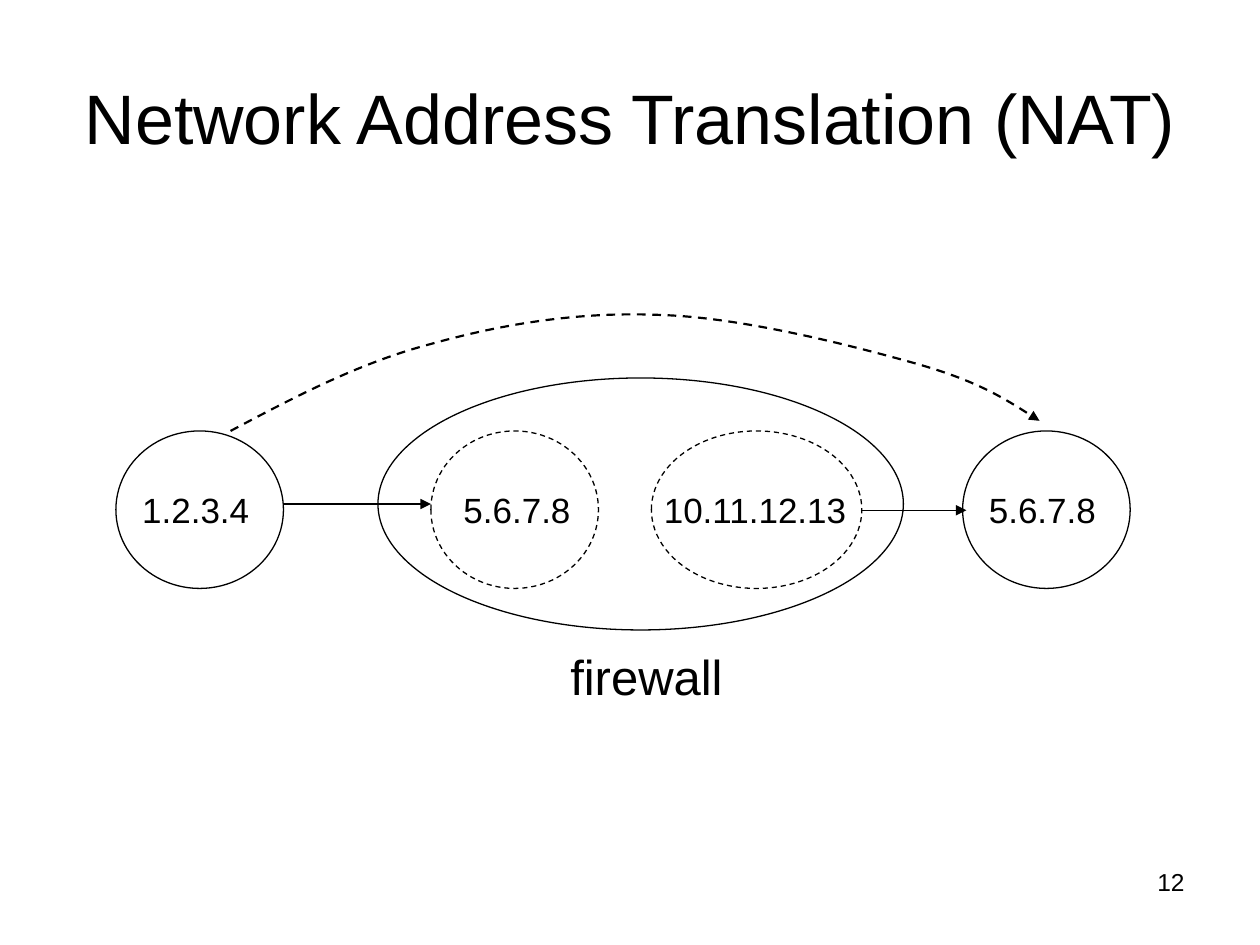
from typing import NamedTuple

from lxml.etree import SubElement
from pptx import Presentation
from pptx.dml.color import RGBColor
from pptx.enum.dml import MSO_LINE
from pptx.enum.shapes import MSO_CONNECTOR, MSO_SHAPE
from pptx.enum.text import MSO_ANCHOR, PP_ALIGN
from pptx.oxml.ns import qn
from pptx.util import Inches, Pt

COLORS = {"ink": "000000", "paper": "FFFFFF"}
FONT = "Arial"


class Oval(NamedTuple):
    left: float
    top: float
    width: float
    height: float
    dashed: bool = False


class Label(NamedTuple):
    text: str
    left: float
    width: float


class Arrow(NamedTuple):
    start: float
    end: float
    y: float


# Nodes share one row; the firewall encloses the two inner ones
ROW, TALL = 3.42, 1.25
OVALS = [
    Oval(3, 3, 4.17, 2),
    Oval(3.42, ROW, 1.33, TALL, True),
    Oval(5.17, ROW, 1.67, TALL, True),
    Oval(0.92, ROW, 1.33, TALL),
    Oval(7.64, ROW, 1.33, TALL),
]
LABELS = [
    Label("1.2.3.4", 1.03, 1.5),
    Label("5.6.7.8", 3.58, 1.5),
    Label("10.11.12.13", 5.17, 1.83),
    Label("5.6.7.8", 7.75, 1.5),
]
ARROWS = [Arrow(2.25, 3.42, 4), Arrow(6.83, 7.67, 4.05)]

# Start point, then two control points and an end point per curve
ROUTE = [
    (1.83, 3.42),
    (2.34, 3.15), (2.85, 2.88), (3.42, 2.73),
    (3.99, 2.57), (4.61, 2.47), (5.25, 2.5),
    (5.89, 2.52), (6.75, 2.74), (7.25, 2.88),
    (7.75, 3.02), (8, 3.18), (8.25, 3.34),
]


def color(name: str) -> RGBColor:
    return RGBColor.from_string(COLORS[name])


def write(frame, text: str, *, size: float, align=PP_ALIGN.LEFT,
          anchor=MSO_ANCHOR.TOP) -> None:
    frame.word_wrap = True
    frame.vertical_anchor = anchor
    para = frame.paragraphs[0]
    para.alignment = align
    run = para.add_run()
    run.text = text
    run.font.size = Pt(size)
    run.font.name = FONT
    run.font.color.rgb = color("ink")


def add_text(slide, text: str, box: tuple, **style) -> None:
    shape = slide.shapes.add_textbox(*map(Inches, box))
    write(shape.text_frame, text, **style)


def ink(line, width: float = 0.75, dashed: bool = False) -> None:
    line.color.rgb = color("ink")
    line.width = Pt(width)
    if dashed:
        line.dash_style = MSO_LINE.DASH


def add_head(shape) -> None:
    line = shape.line._get_or_add_ln()
    SubElement(line, qn("a:tailEnd"), type="triangle")


def draw_oval(slide, oval: Oval) -> None:
    shape = slide.shapes.add_shape(MSO_SHAPE.OVAL, *map(Inches, oval[:4]))
    shape.shadow.inherit = False
    shape.fill.background()
    ink(shape.line, dashed=oval.dashed)


def draw_arrow(slide, arrow: Arrow) -> None:
    y = Inches(arrow.y)
    link = slide.shapes.add_connector(
        MSO_CONNECTOR.STRAIGHT, Inches(arrow.start), y, Inches(arrow.end), y)
    ink(link.line)
    add_head(link)
    SubElement(link._element.spPr, qn("a:effectLst"))


def draw_curve(slide, points: list) -> None:
    first, *rest = [(Inches(x), Inches(y)) for x, y in points]
    pen = slide.shapes.build_freeform(*first)
    pen.add_line_segments(rest, close=False)
    shape = pen.convert_to_shape()
    # Each three line segments become one cubic curve
    steps = list(shape._element.iter(qn("a:lnTo")))
    for i in range(0, len(steps), 3):
        curve = steps[i]
        curve.tag = qn("a:cubicBezTo")
        for step in steps[i + 1:i + 3]:
            curve.append(step[0])
            step.getparent().remove(step)
    shape.shadow.inherit = False
    shape.fill.background()
    ink(shape.line, 1.25, True)
    add_head(shape)


def main() -> None:
    deck = Presentation()
    deck.slide_width, deck.slide_height = Inches(10), Inches(7.5)
    slide = deck.slides.add_slide(deck.slide_layouts[5])
    slide.background.fill.solid()
    slide.background.fill.fore_color.rgb = color("paper")

    # Title
    title = slide.shapes.title
    title.left, title.top = Inches(0.5), Inches(0.3)
    title.width, title.height = Inches(9), Inches(1.25)
    write(title.text_frame, "Network Address Translation (NAT)", size=40,
          align=PP_ALIGN.CENTER, anchor=MSO_ANCHOR.MIDDLE)

    # Hosts and firewall
    for oval in OVALS:
        draw_oval(slide, oval)
    for label in LABELS:
        add_text(slide, label.text, (label.left, 3.83, label.width, 0.43),
                 size=20)
    add_text(slide, "firewall", (3.67, 5.08, 2.92, 0.57), size=28,
             align=PP_ALIGN.CENTER)

    # Apparent route and real hops
    draw_curve(slide, ROUTE)
    for arrow in ARROWS:
        draw_arrow(slide, arrow)

    # Slide number
    add_text(slide, "12", (7.17, 6.83, 2.33, 0.52), size=14,
             align=PP_ALIGN.RIGHT)
    deck.save("out.pptx")


if __name__ == "__main__":
    main()
